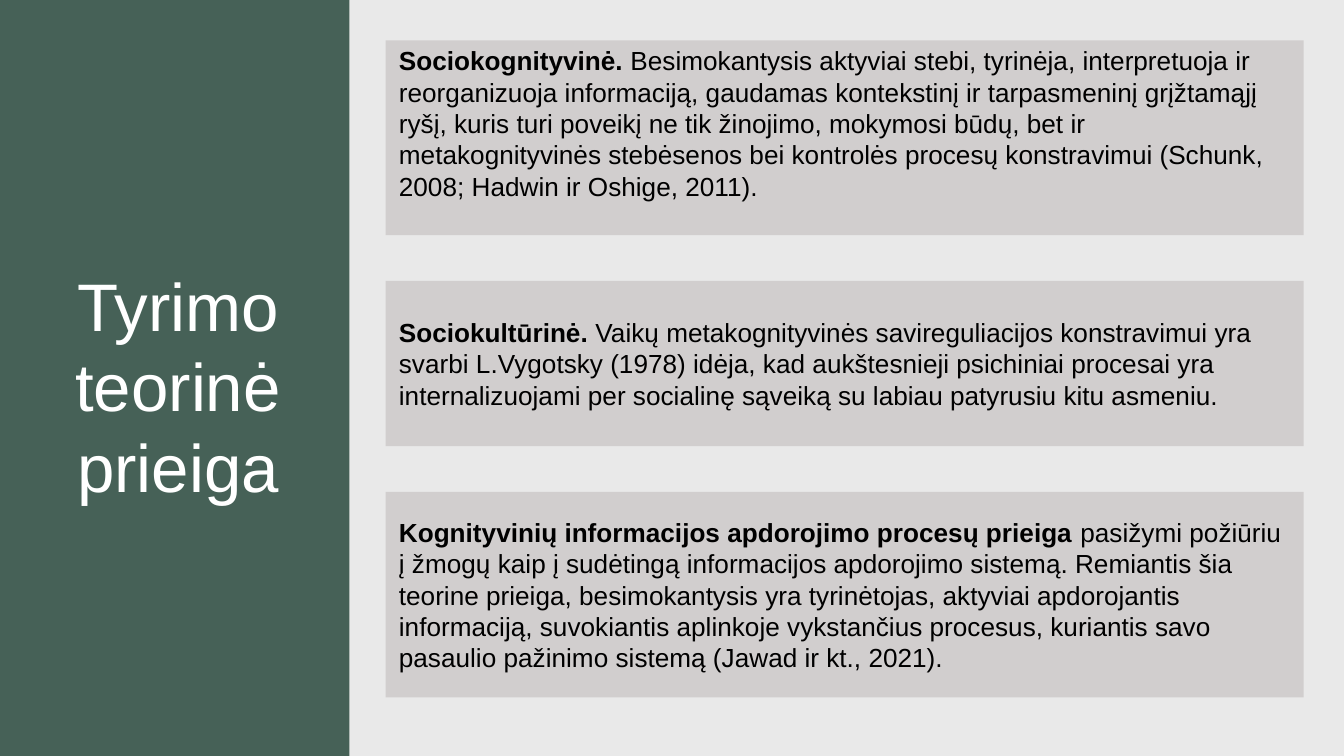
"""Build the slide on the theoretical approach of the study."""
from dataclasses import dataclass

from pptx import Presentation
from pptx import util as u
from pptx.dml.color import RGBColor
from pptx.enum import shapes, text

FONT = "Arial"
GREEN, GREY, PALE, WHITE, BLACK = "466157", "D1CECE", "E9E9E9", "FFFFFF", "000000"
WIDTH = 10
HEIGHT = WIDTH * 9 / 16
CARD_LEFT, CARD_WIDTH, CARD_TOP, CARD_GAP = 2.87, 6.83, 0.3, 0.34


@dataclass
class Card:
    lead: str
    body: str
    height: float
    margin_top: float = 0.1
    margin_bottom: float = 0.1


CARDS = [
    Card("Sociokognityvinė. ",
         "Besimokantysis aktyviai stebi, tyrinėja, interpretuoja ir reorganizuoja "
         "informaciją, gaudamas kontekstinį ir tarpasmeninį grįžtamąjį ryšį, kuris turi "
         "poveikį ne tik žinojimo, mokymosi būdų, bet ir metakognityvinės stebėsenos bei "
         "kontrolės procesų konstravimui (Schunk, 2008; Hadwin ir Oshige, 2011).",
         1.45, margin_top=0.03, margin_bottom=0.25),
    Card("Sociokultūrinė. ",
         "Vaikų metakognityvinės savireguliacijos konstravimui yra svarbi L.Vygotsky "
         "(1978) idėja, kad aukštesnieji psichiniai procesai yra internalizuojami per "
         "socialinę sąveiką su labiau patyrusiu kitu asmeniu.",
         1.23),
    Card("Kognityvinių informacijos apdorojimo procesų prieiga ",
         "pasižymi požiūriu į žmogų kaip į sudėtingą informacijos apdorojimo sistemą. "
         "Remiantis šia teorine prieiga, besimokantysis yra tyrinėtojas, aktyviai "
         "apdorojantis informaciją, suvokiantis aplinkoje vykstančius procesus, kuriantis "
         "savo pasaulio pažinimo sistemą (Jawad ir kt., 2021).",
         1.53),
]


def color(value: str) -> RGBColor:
    return RGBColor.from_string(value)


def apply(target, values: dict) -> None:
    for name, value in values.items():
        setattr(target, name, value)


def add_box(page, left: float, top: float, width: float, height: float, fill: str):
    box = page.shapes.add_shape(shapes.MSO_SHAPE.RECTANGLE,
                                *map(u.Inches, (left, top, width, height)))
    box.shadow.inherit = False
    box.fill.solid()
    box.fill.fore_color.rgb = color(fill)
    box.line.fill.background()
    return box


def format_frame(frame, top: float = 0.1, bottom: float = 0.1) -> None:
    apply(frame, {"word_wrap": True, "auto_size": text.MSO_AUTO_SIZE.NONE,
                  "vertical_anchor": text.MSO_ANCHOR.MIDDLE,
                  "margin_left": u.Inches(0.1), "margin_right": u.Inches(0.1),
                  "margin_top": u.Inches(top), "margin_bottom": u.Inches(bottom)})


def format_para(para, alignment) -> None:
    apply(para, {"alignment": alignment, "line_spacing": 1.0,
                 "space_before": u.Pt(0), "space_after": u.Pt(0)})


def add_span(para, words: str, size: float, ink: str, bold: bool = False) -> None:
    span = para.add_run()
    span.text = words
    apply(span.font, {"name": FONT, "size": u.Pt(size), "bold": bold})
    span.font.color.rgb = color(ink)


def add_card(page, card: Card, top: float) -> None:
    box = add_box(page, CARD_LEFT, top, CARD_WIDTH, card.height, GREY)
    format_frame(box.text_frame, card.margin_top, card.margin_bottom)
    para = box.text_frame.paragraphs[0]
    format_para(para, text.PP_ALIGN.LEFT)
    add_span(para, card.lead, 14, BLACK, bold=True)
    add_span(para, card.body, 14, BLACK)


def format_title(title, words: str) -> None:
    apply(title, {"left": u.Inches(0.3), "top": u.Inches(0.43),
                  "width": u.Inches(2.05), "height": u.Inches(4.87)})
    format_frame(title.text_frame)
    para = title.text_frame.paragraphs[0]
    format_para(para, text.PP_ALIGN.CENTER)
    add_span(para, words, 36, WHITE)


def main() -> None:
    deck = Presentation()
    apply(deck, {"slide_width": u.Inches(WIDTH), "slide_height": u.Inches(HEIGHT)})
    page = deck.slides.add_slide(deck.slide_layouts.get_by_name("Title Only"))
    page.background.fill.solid()
    page.background.fill.fore_color.rgb = color(PALE)

    title = page.shapes.title
    format_title(title, "Tyrimo teorinė prieiga")
    panel = add_box(page, 0, 0, 2.6, HEIGHT, GREEN)
    title.element.addprevious(panel.element)

    top = CARD_TOP
    for card in CARDS:
        add_card(page, card, top)
        top += card.height + CARD_GAP
    deck.save("out.pptx")


if __name__ == "__main__":
    main()
